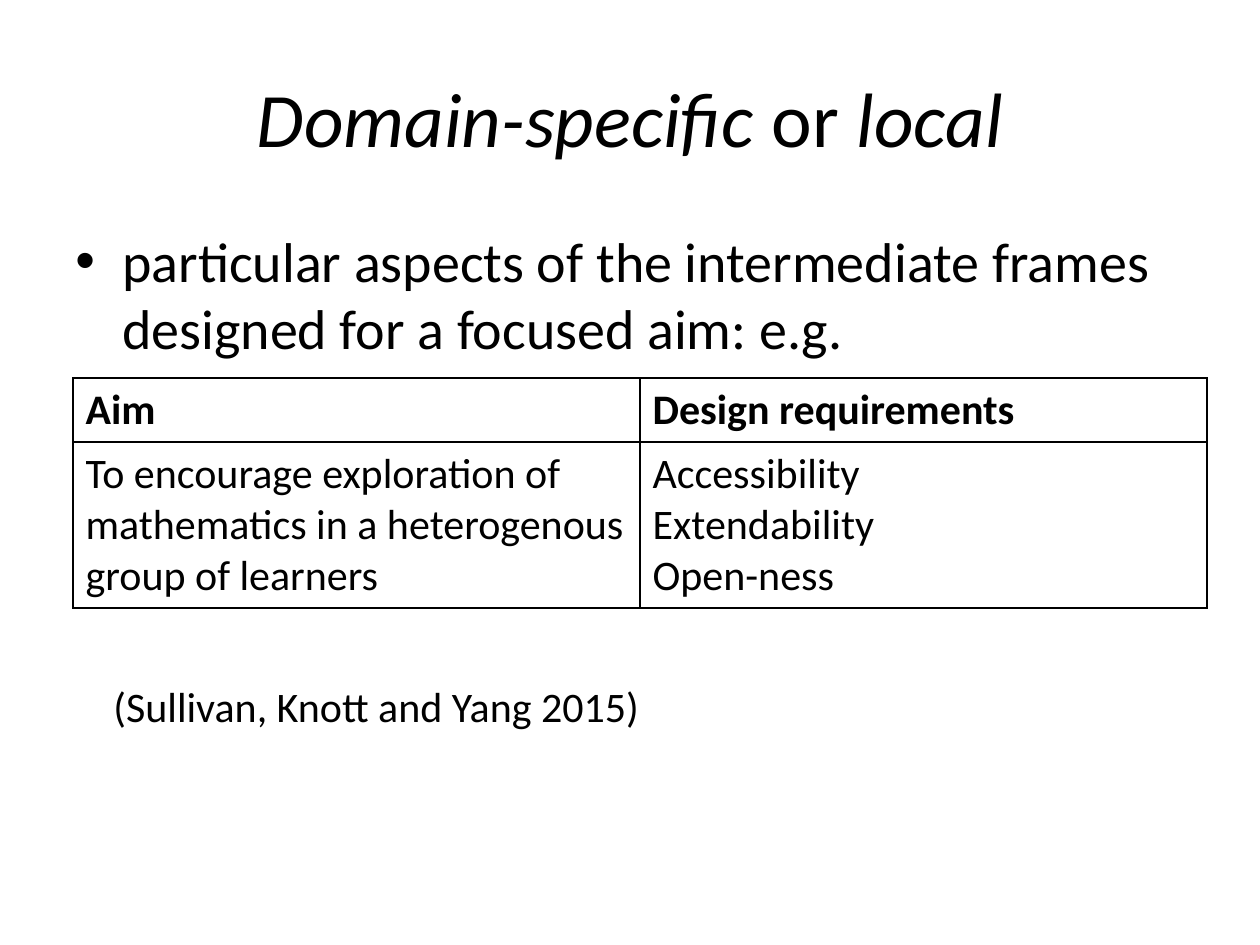
from lxml import etree
from pptx import Presentation
from pptx import util as u
from pptx.dml.color import RGBColor
from pptx.enum import text
from pptx.oxml.ns import qn

BLACK = RGBColor(0, 0, 0)
WHITE = RGBColor(255, 255, 255)
FONT = "Calibri"
PX_PER_INCH = 126

ROWS = [
    ("Aim", "Design requirements"),
    ("To encourage exploration of mathematics in a heterogenous group of learners",
     "Accessibility\nExtendability\nOpen-ness"),
]


def px(n):
    return u.Emu(round(n * 914400 / PX_PER_INCH))


def style(r, size, bold=False, italic=False):
    f = r.font
    f.name, f.size, f.bold, f.italic = FONT, u.Pt(size), bold, italic
    f.color.rgb = BLACK


def add_box(s, left, top, width, height, anchor):
    tf = s.shapes.add_textbox(px(left), px(top), px(width), px(height)).text_frame
    tf.word_wrap = True
    tf.vertical_anchor = anchor
    return tf


def add_title(s):
    tf = add_box(s, 63, 38, 1134, 158, text.MSO_ANCHOR.MIDDLE)
    p = tf.paragraphs[0]
    p.alignment = text.PP_ALIGN.CENTER
    for words, italic in [("Domain-specific ", True), ("or", False), (" local", True)]:
        r = p.add_run()
        r.text = words
        style(r, 44, italic=italic)


def set_indent(p, left, first=0, bullet=None):
    pPr = p._p.get_or_add_pPr()
    pPr.set("marL", str(px(left)))
    pPr.set("indent", str(px(first)))
    if bullet:
        etree.SubElement(pPr, qn("a:buFont")).set("typeface", "Arial")
        etree.SubElement(pPr, qn("a:buChar")).set("char", bullet)


def add_body(s):
    tf = add_box(s, 63, 220, 1134, 624, text.MSO_ANCHOR.TOP)
    tf.text = ("particular aspects of the intermediate frames designed for a focused aim: e.g.\n"
               "(Sullivan, Knott and Yang 2015)")
    point, citation = tf.paragraphs
    point.space_before = u.Pt(2)
    set_indent(point, 47, -47, "•")
    style(point.runs[0], 32)
    citation.space_before = u.Pt(183)
    set_indent(citation, 38)
    style(citation.runs[0], 24)


def add_borders(cell):
    tcPr = cell._tc.get_or_add_tcPr()
    for i, side in enumerate(("lnL", "lnR", "lnT", "lnB")):
        ln = etree.Element(qn(f"a:{side}"), w=str(u.Pt(1)))
        fill = etree.SubElement(ln, qn("a:solidFill"))
        etree.SubElement(fill, qn("a:srgbClr")).set("val", str(BLACK))
        tcPr.insert(i, ln)


def add_aims_table(s):
    table = s.shapes.add_table(2, 2, px(73), px(378), px(1134), px(230)).table
    for row, height in zip(table.rows, (64, 166)):
        row.height = px(height)
    for i, values in enumerate(ROWS):
        for j, value in enumerate(values):
            cell = table.cell(i, j)
            cell.fill.solid()
            cell.fill.fore_color.rgb = WHITE
            add_borders(cell)
            cell.text_frame.text = value
            for p in cell.text_frame.paragraphs:
                style(p.runs[0], 24, bold=i == 0)


def main():
    prs = Presentation()
    prs.slide_width, prs.slide_height = px(1260), px(945)
    s = prs.slides.add_slide(prs.slide_layouts[6])
    add_title(s)
    add_body(s)
    add_aims_table(s)
    prs.save("out.pptx")


if __name__ == "__main__":
    main()
